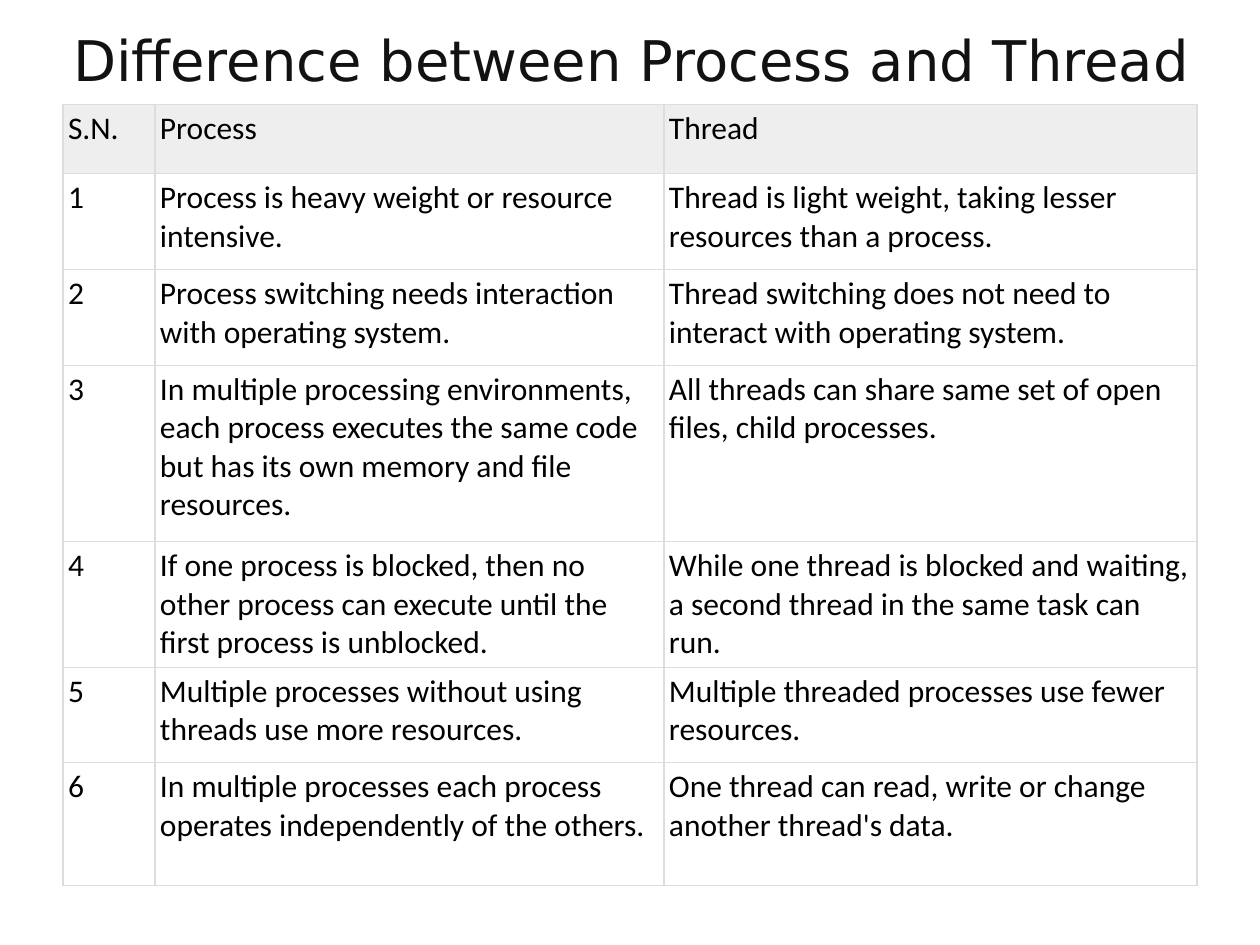
"""Build a slide with a table comparing processes and threads."""
from typing import NamedTuple

from lxml.etree import SubElement
from pptx import Presentation
from pptx.dml.color import RGBColor
from pptx.enum.text import MSO_ANCHOR, PP_ALIGN
from pptx.oxml.ns import qn
from pptx.util import Inches, Pt

COLORS = {"title": "121214", "text": "000000", "header": "EEEEEE", "border": "DDDDDD"}
COLUMN_WIDTHS = (0.73, 4.04, 4.23)
CELL_MARGIN = 0.04


class Row(NamedTuple):
    number: str
    process: str
    thread: str
    height: float


ROWS = [
    Row("S.N.", "Process", "Thread", 0.55),
    Row("1", "Process is heavy weight or resource intensive.",
        "Thread is light weight, taking lesser resources than a process.", 0.76),
    Row("2", "Process switching needs interaction with operating system.",
        "Thread switching does not need to interact with operating system.", 0.76),
    Row("3", "In multiple processing environments, each process executes the same code "
        "but has its own memory and file resources.",
        "All threads can share same set of open files, child processes.", 1.4),
    Row("4", "If one process is blocked, then no other process can execute until the "
        "first process is unblocked.",
        "While one thread is blocked and waiting, a second thread in the same task can run.", 0.97),
    Row("5", "Multiple processes without using threads use more resources.",
        "Multiple threaded processes use fewer resources.", 0.76),
    Row("6", "In multiple processes each process operates independently of the others.",
        "One thread can read, write or change another thread's data.", 0.97),
]


def style_font(paragraph, name: str, size: float, color: str) -> None:
    paragraph.font.name = name
    paragraph.font.size = Pt(size)
    paragraph.font.color.rgb = RGBColor.from_string(COLORS[color])


def add_borders(cell) -> None:
    properties = cell._tc.get_or_add_tcPr()
    for side in ("lnL", "lnR", "lnT", "lnB"):
        line = SubElement(properties, qn(f"a:{side}"), w=str(Pt(0.75)))
        fill = SubElement(line, qn("a:solidFill"))
        SubElement(fill, qn("a:srgbClr"), val=COLORS["border"])


def fill_cell(cell, text: str, is_header: bool) -> None:
    cell.text = text
    cell.margin_left = cell.margin_right = Inches(CELL_MARGIN)
    cell.margin_top = cell.margin_bottom = Inches(CELL_MARGIN)
    style_font(cell.text_frame.paragraphs[0], "Calibri", 18, "text")
    add_borders(cell)
    if is_header:
        cell.fill.solid()
        cell.fill.fore_color.rgb = RGBColor.from_string(COLORS["header"])
    else:
        cell.fill.background()


def add_comparison(slide, rows: list[Row]) -> None:
    table = slide.shapes.add_table(
        len(rows), len(COLUMN_WIDTHS), Inches(0.5), Inches(0.83),
        Inches(sum(COLUMN_WIDTHS)), Inches(sum(row.height for row in rows))).table
    table.first_row = table.horz_banding = False
    for column, width in zip(table.columns, COLUMN_WIDTHS):
        column.width = Inches(width)
    for index, row in enumerate(rows):
        table.rows[index].height = Inches(row.height)
        for cell, text in zip(table.rows[index].cells, (row.number, row.process, row.thread)):
            fill_cell(cell, text, index == 0)


def set_title(slide, text: str) -> None:
    title = slide.shapes.title
    title.left, title.top = Inches(0.58), Inches(0.17)
    title.width, title.height = Inches(8.98), Inches(1.15)
    frame = title.text_frame
    frame.text = text
    frame.word_wrap = True
    frame.vertical_anchor = MSO_ANCHOR.TOP
    frame.margin_left = 0
    frame.margin_top = frame.margin_right = frame.margin_bottom = Inches(0.03)
    paragraph = frame.paragraphs[0]
    paragraph.alignment = PP_ALIGN.LEFT
    style_font(paragraph, "DejaVu Sans", 32, "title")


def main() -> None:
    presentation = Presentation()
    presentation.slide_width, presentation.slide_height = Inches(10), Inches(7.5)
    slide = presentation.slides.add_slide(presentation.slide_layouts[5])
    set_title(slide, "Difference between Process and Thread")
    add_comparison(slide, ROWS)
    presentation.save("out.pptx")


if __name__ == "__main__":
    main()
